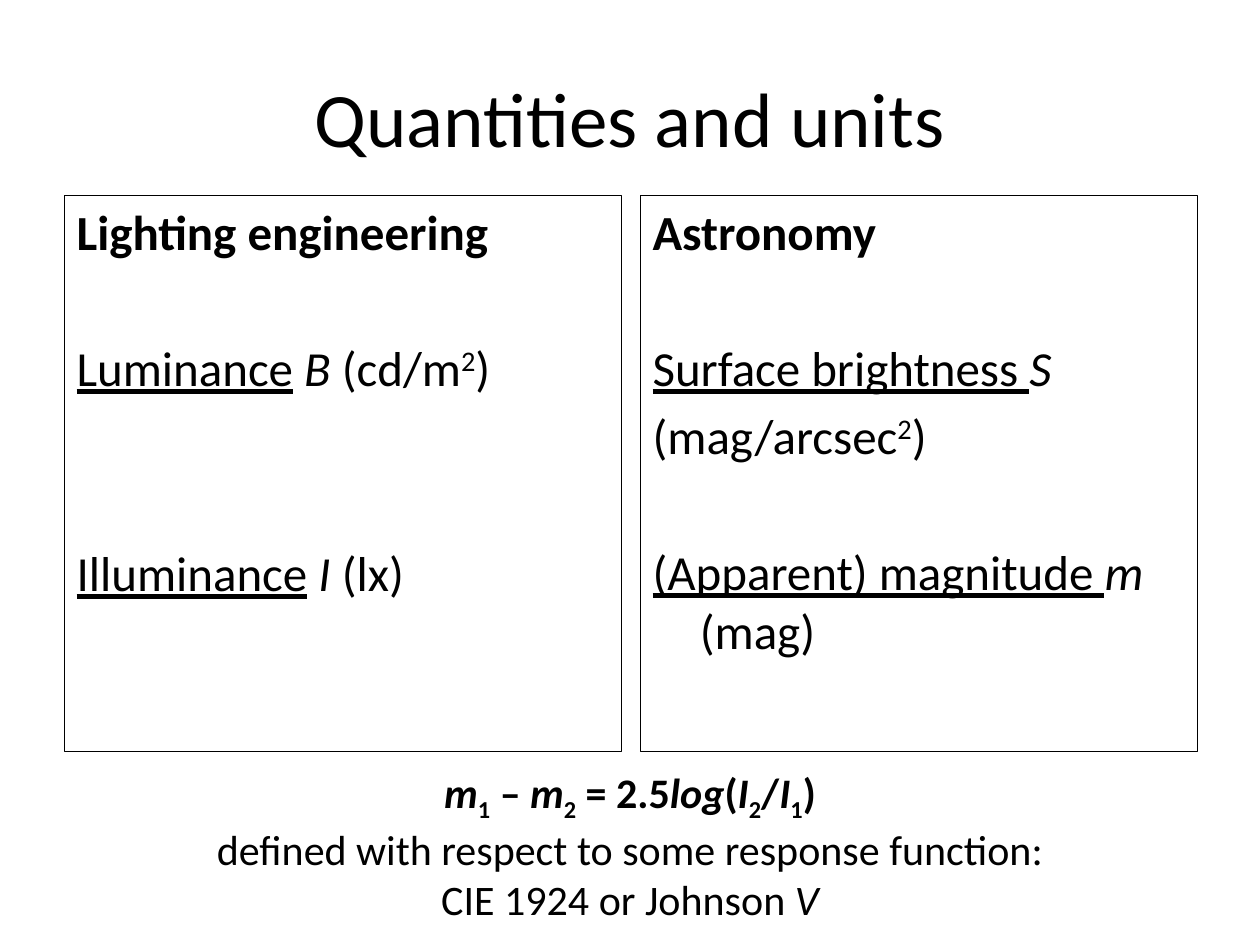
import pptx
import pptx.dml.color
import pptx.enum.shapes
import pptx.enum.text
import pptx.util

Pt = pptx.util.Pt
ALIGN = pptx.enum.text.PP_ALIGN
ANCHOR = pptx.enum.text.MSO_ANCHOR
COLORS = {"ink": "000000"}
FONT = "Calibri"
BASELINES = {"^": "30000", "_": "-25000"}
ENTRY_GAP, ROW_PITCH = 5, 39.2

LIGHTING = [
    (0, [("Lighting engineering", "b")]),
    (2, [("Luminance", "u"), (" ", ""), ("B", "i"), (" (cd/m", ""), ("2", "^"), (")", "")]),
    (3, [("Illuminance", "u"), (" ", ""), ("I ", "i"), ("(lx)", "")]),
]
ASTRONOMY = [
    (0, [("Astronomy", "b")]),
    (2, [("Surface brightness ", "u"), ("S", "i")]),
    (1, [("(mag/arcsec", ""), ("2", "^"), (")", "")]),
    (2, [("(Apparent) magnitude ", "u"), ("m ", "i"), ("(mag)", "")]),
]
RELATION = [
    [("m", "bi"), ("1", "b_"), (" – ", "b"), ("m", "bi"), ("2", "b_"), (" = 2.5", "b"),
     ("log", "bi"), ("(", "b"), ("I", "bi"), ("2", "b_"), ("/", "b"), ("I", "bi"),
     ("1", "b_"), (")", "b")],
    [("defined with respect to some response function:", "")],
    [("CIE 1924 or Johnson ", ""), ("V", "i")],
]


def ink():
    """Return the text and line colour."""
    return pptx.dml.color.RGBColor.from_string(COLORS["ink"])


def write_paragraph(para, spans, size, align):
    """Fill a paragraph with spans styled by b, i, u, ^ (superscript) and _ (subscript)."""
    para.alignment = align
    para.font.name = FONT
    para.font.size = Pt(size)
    para.font.color.rgb = ink()
    for text, style in spans:
        span = para.add_run()
        span.text = text
        span.font.bold = "b" in style
        span.font.italic = "i" in style
        span.font.underline = "u" in style
        for mark, offset in BASELINES.items():
            if mark in style:
                span._r.get_or_add_rPr().set("baseline", offset)


def paragraphs(frame, count):
    """Return the given number of paragraphs in a text frame."""
    return [frame.paragraphs[0]] + [frame.add_paragraph() for _ in range(count - 1)]


def add_centred_text(page, left, top, width, height, lines, size, anchor):
    """Add a text box of centred lines."""
    frame = page.shapes.add_textbox(Pt(left), Pt(top), Pt(width), Pt(height)).text_frame
    frame.word_wrap = True
    frame.vertical_anchor = anchor
    for para, spans in zip(paragraphs(frame, len(lines)), lines):
        write_paragraph(para, spans, size, ALIGN.CENTER)


def add_panel(page, left, entries):
    """Add an outlined panel whose entries sit a number of rows below one another."""
    box = page.shapes.add_shape(pptx.enum.shapes.MSO_SHAPE.RECTANGLE,
                                Pt(left), Pt(111.6), Pt(318.2), Pt(317.5))
    box.shadow.inherit = False
    box.fill.background()
    box.line.color.rgb = ink()
    box.line.width = Pt(0.25)
    frame = box.text_frame
    frame.word_wrap = True
    frame.vertical_anchor = ANCHOR.TOP
    for para, (rows, spans) in zip(paragraphs(frame, len(entries)), entries):
        write_paragraph(para, spans, 28, ALIGN.LEFT)
        if rows:
            para.space_before = Pt(ENTRY_GAP + (rows - 1) * ROW_PITCH)
        properties = para._p.get_or_add_pPr()
        properties.set("marL", str(Pt(27)))
        properties.set("indent", str(Pt(-27)))


def main():
    """Build the slide on quantities and units."""
    deck = pptx.Presentation()
    deck.slide_width, deck.slide_height = Pt(720), Pt(540)
    page = deck.slides.add_slide(deck.slide_layouts[6])
    add_centred_text(page, 36, 21.6, 648, 90, [[("Quantities and units", "")]], 44, ANCHOR.MIDDLE)
    for left, entries in ((36.7, LIGHTING), (365.8, ASTRONOMY)):
        add_panel(page, left, entries)
    add_centred_text(page, 36.7, 434.2, 646.6, 94.3, RELATION, 24, ANCHOR.TOP)
    deck.save("out.pptx")


if __name__ == "__main__":
    main()
